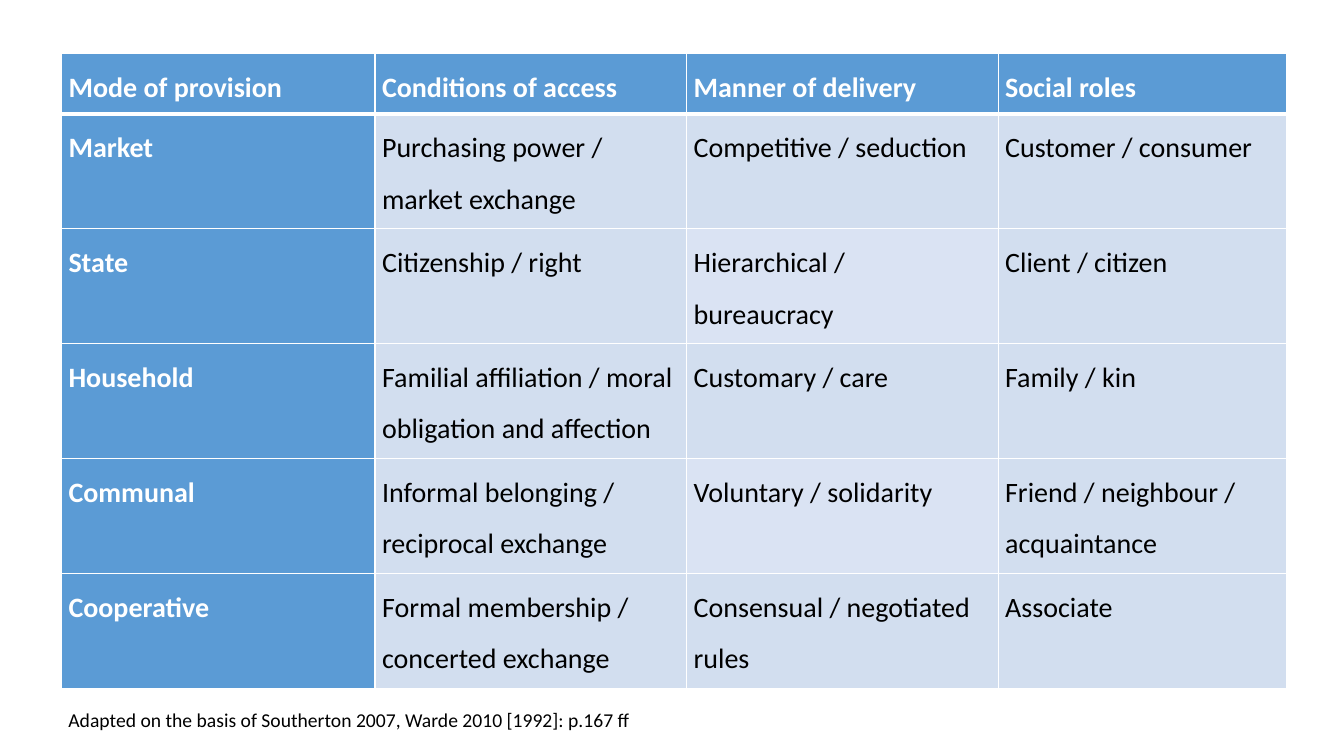
from lxml import etree
from pptx import Presentation
from pptx.dml.color import RGBColor
from pptx.enum import text
from pptx.oxml import ns
from pptx.util import Inches, Pt

# Content
MODES = [
    ("Mode of provision", "Conditions of access", "Manner of delivery", "Social roles"),
    ("Market", "Purchasing power / market exchange", "Competitive / seduction",
     "Customer / consumer"),
    ("State", "Citizenship / right", "Hierarchical / bureaucracy", "Client / citizen"),
    ("Household", "Familial affiliation / moral obligation and affection",
     "Customary / care", "Family / kin"),
    ("Communal", "Informal belonging / reciprocal exchange", "Voluntary / solidarity",
     "Friend / neighbour / acquaintance"),
    ("Cooperative", "Formal membership / concerted exchange",
     "Consensual / negotiated rules", "Associate"),
]
CITATION = "Adapted on the basis of Southerton 2007, Warde 2010 [1992]: p.167 ff"

# Layout and colours
COLUMN_WIDTHS = [3.11, 3.09, 3.09, 2.86]
HEADER_HEIGHT, ROW_HEIGHT = 0.6, 1.14
HEADING, BODY, ACCENT = "5B9BD5", "D2DEEF", "DAE3F3"
WHITE, BLACK = "FFFFFF", "000000"
ACCENT_CELLS = {(2, 2), (4, 2)}


def color(value):
    return RGBColor.from_string(value)


def write(frame, content, size=20, fill=BLACK, bold=False, spacing=1.0):
    paragraph = frame.paragraphs[0]
    paragraph.line_spacing = spacing
    run = paragraph.add_run()
    run.text = content
    run.font.name = "Calibri"
    run.font.size = Pt(size)
    run.font.bold = bold
    run.font.color.rgb = color(fill)


def add_border(cell, side, points):
    line = etree.SubElement(cell._tc.get_or_add_tcPr(), ns.qn("a:ln" + side),
                            w=str(Pt(points)))
    solid = etree.SubElement(line, ns.qn("a:solidFill"))
    etree.SubElement(solid, ns.qn("a:srgbClr"), val=WHITE)


def format_cell(cell, row, column, content):
    heading = row == 0 or column == 0
    cell.margin_left = cell.margin_right = Inches(0.07)
    cell.margin_top = cell.margin_bottom = 0
    # A thick rule separates the header from the rows below
    widths = {"L": 1, "R": 1, "T": 3 if row == 1 else 1, "B": 3 if row == 0 else 1}
    for side, points in widths.items():
        add_border(cell, side, points)
    cell.fill.solid()
    background = HEADING if heading else ACCENT if (row, column) in ACCENT_CELLS else BODY
    cell.fill.fore_color.rgb = color(background)
    write(cell.text_frame, content, fill=WHITE if heading else BLACK,
          bold=heading, spacing=1.5)


def main():
    deck = Presentation()
    deck.slide_width, deck.slide_height = Inches(13.33), Inches(7.5)
    slide = deck.slides.add_slide(deck.slide_layouts[6])

    # Table of provision modes
    heights = [HEADER_HEIGHT] + [ROW_HEIGHT] * (len(MODES) - 1)
    provision = slide.shapes.add_table(
        len(MODES), len(COLUMN_WIDTHS), Inches(0.61), Inches(0.53),
        Inches(sum(COLUMN_WIDTHS)), Inches(sum(heights))).table
    for column, width in zip(provision.columns, COLUMN_WIDTHS):
        column.width = Inches(width)
    for row, height in zip(provision.rows, heights):
        row.height = Inches(height)
    for r, mode in enumerate(MODES):
        for c, content in enumerate(mode):
            format_cell(provision.cell(r, c), r, c, content)

    # Citation below the table
    citation = slide.shapes.add_textbox(Inches(0.58), Inches(6.97),
                                        Inches(5.78), Inches(0.34)).text_frame
    citation.word_wrap = False
    citation.auto_size = text.MSO_AUTO_SIZE.SHAPE_TO_FIT_TEXT
    write(citation, CITATION, size=14)

    deck.save("out.pptx")


if __name__ == "__main__":
    main()
